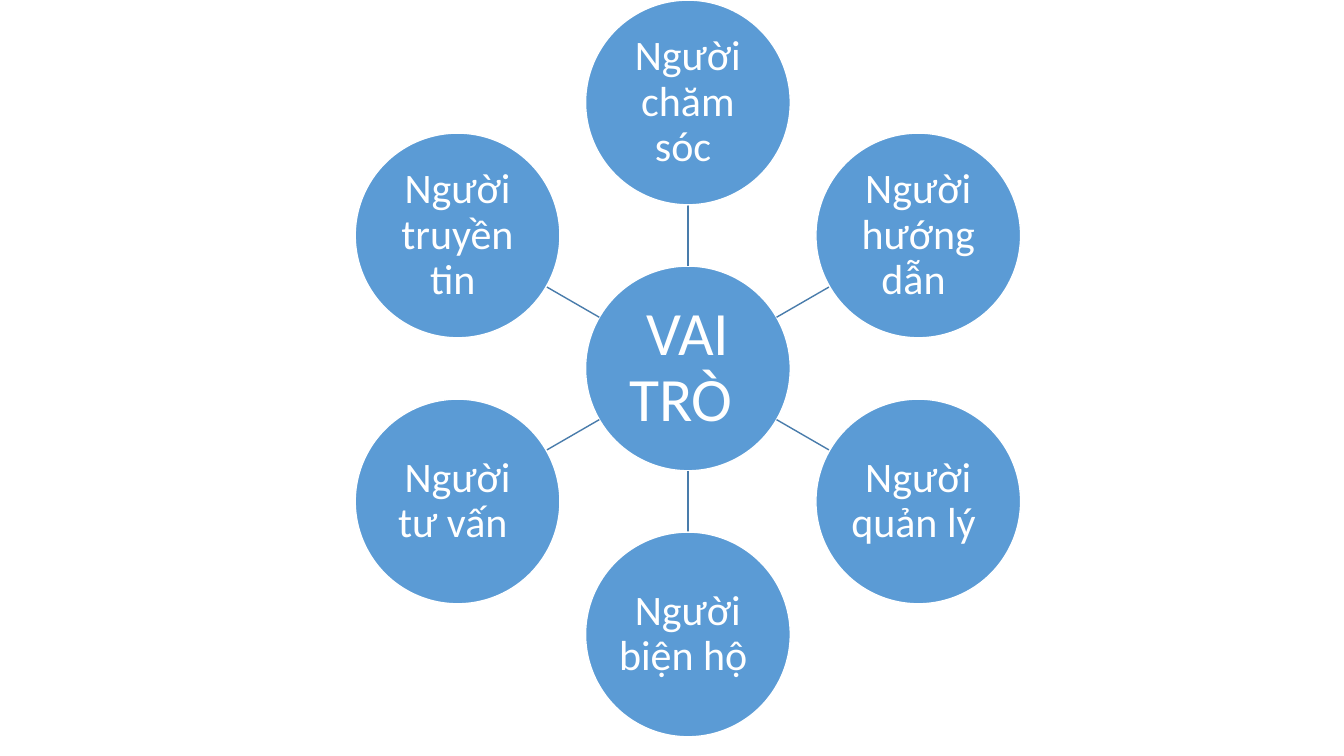
"""Build a radial diagram of six roles around a central hub."""
from math import cos, radians, sin

from lxml import etree
from pptx import Presentation
from pptx.dml.color import RGBColor
from pptx.enum.shapes import MSO_CONNECTOR, MSO_SHAPE
from pptx.enum.text import MSO_ANCHOR, PP_ALIGN
from pptx.oxml.ns import qn
from pptx.util import Pt

HUB = "VAI TRÒ "
ROLES = [
    "Người chăm sóc ",
    "Người hướng dẫn ",
    "Người quản lý ",
    "Người biện hộ ",
    "Người tư vấn ",
    "Người truyền tin ",
]

BLUE = RGBColor(0x5B, 0x9B, 0xD5)
SPOKE_BLUE = RGBColor(0x49, 0x7C, 0xAB)
WHITE = RGBColor(0xFF, 0xFF, 0xFF)
OVAL = MSO_SHAPE.OVAL
STRAIGHT = MSO_CONNECTOR.STRAIGHT
MIDDLE = MSO_ANCHOR.MIDDLE
CENTER = PP_ALIGN.CENTER

SLIDE_WIDTH, SLIDE_HEIGHT = 960, 540
CENTER_X, CENTER_Y = 491.4, 263.2
RADIUS = 73.1
ORBIT = 190


def point_at(angle, distance):
    """Return the point at a clockwise angle from the top of the hub."""
    turn = radians(angle)
    return CENTER_X + distance * sin(turn), CENTER_Y - distance * cos(turn)


def add_circle(slide, middle, text, size, inset):
    """Add a labelled circle around its middle point."""
    x, y = middle
    shape = slide.shapes.add_shape(
        OVAL, Pt(x - RADIUS), Pt(y - RADIUS), Pt(2 * RADIUS), Pt(2 * RADIUS))
    shape.shadow.inherit = False
    shape.fill.solid()
    shape.fill.fore_color.rgb = BLUE
    shape.line.color.rgb = WHITE
    shape.line.width = Pt(1)
    frame = shape.text_frame
    frame.word_wrap = True
    frame.vertical_anchor = MIDDLE
    frame.margin_left = frame.margin_right = Pt(inset)
    frame.margin_top = frame.margin_bottom = Pt(inset)
    paragraph = frame.paragraphs[0]
    paragraph.text = text
    paragraph.alignment = CENTER
    paragraph.line_spacing = 0.9
    paragraph.font.name = "Calibri"
    paragraph.font.size = Pt(size)
    paragraph.font.color.rgb = WHITE


def add_spoke(slide, angle):
    """Add the line from the hub's edge to a role's edge."""
    ends = point_at(angle, RADIUS) + point_at(angle, ORBIT - RADIUS)
    spoke = slide.shapes.add_connector(STRAIGHT, *map(Pt, ends))
    spoke.line.color.rgb = SPOKE_BLUE
    spoke.line.width = Pt(1)
    etree.SubElement(spoke._element.spPr, qn("a:effectLst"))


def main():
    """Create and save the presentation."""
    presentation = Presentation()
    presentation.slide_width = Pt(SLIDE_WIDTH)
    presentation.slide_height = Pt(SLIDE_HEIGHT)
    slide = presentation.slides.add_slide(presentation.slide_layouts[6])
    add_circle(slide, (CENTER_X, CENTER_Y), HUB, 44, 2.2)
    for index, role in enumerate(ROLES):
        angle = index * 360 / len(ROLES)
        add_spoke(slide, angle)
        add_circle(slide, point_at(angle, ORBIT), role, 30, 1.5)
    presentation.save("out.pptx")


if __name__ == "__main__":
    main()
